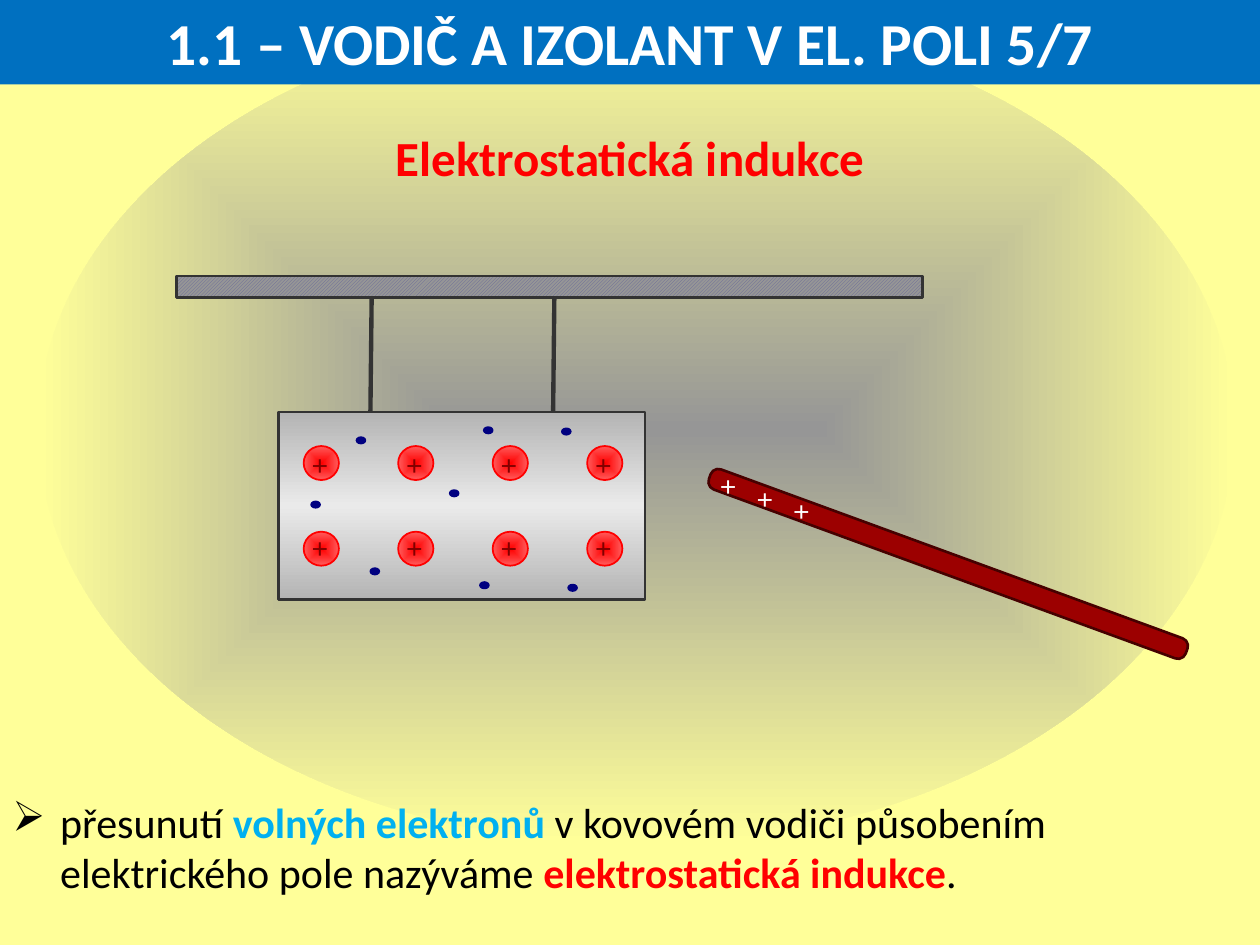
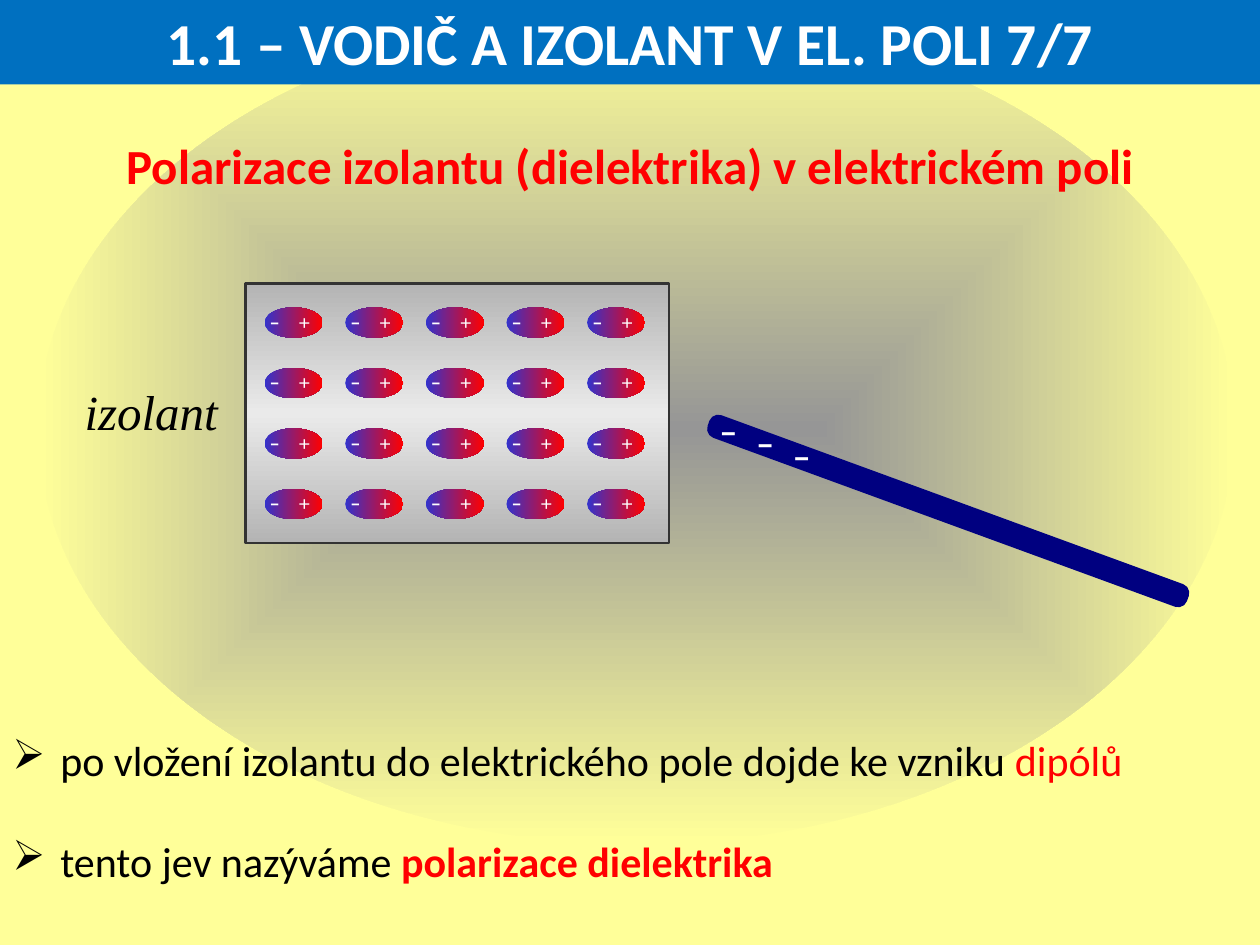
"""Build two slides on conductors and insulators in an electric field."""
import lxml.etree
import pptx
import pptx.dml.color
import pptx.enum.dml
import pptx.enum.shapes
import pptx.enum.text
import pptx.oxml
import pptx.oxml.ns
import pptx.util

Inches, Pt = pptx.util.Inches, pptx.util.Pt
RGBColor = pptx.dml.color.RGBColor
MSO_SHAPE = pptx.enum.shapes.MSO_SHAPE
CENTER = pptx.enum.text.PP_ALIGN.CENTER
qn = pptx.oxml.ns.qn

YELLOW = RGBColor(0xFF, 0xFF, 0x99)
GREY = RGBColor(0x96, 0x96, 0x96)
SLATE = RGBColor(0x66, 0x66, 0x99)
DARK = RGBColor(0x33, 0x33, 0x33)
SILVER = RGBColor(0xB4, 0xB4, 0xB4)
PALE = RGBColor(0xEA, 0xEA, 0xEA)
BLACK = RGBColor(0, 0, 0)
WHITE = RGBColor(0xFF, 0xFF, 0xFF)
RED = RGBColor(0xFF, 0, 0)
LIGHT_RED = RGBColor(0xFF, 0x5C, 0x5C)
MAROON = RGBColor(0x80, 0, 0)
ROD_RED = RGBColor(0x9C, 0, 0)
ROD_EDGE = RGBColor(0x46, 0, 0)
NAVY = RGBColor(0, 0, 0x80)
VIOLET = RGBColor(0x33, 0x33, 0xCC)
SKY = RGBColor(0, 0xB0, 0xF0)
BLUE = RGBColor(0, 0x70, 0xC0)

RADIAL = '<a:path path="shape"><a:fillToRect l="50000" t="50000" r="50000" b="50000"/></a:path>'
ACROSS = '<a:lin ang="0" scaled="0"/>'
DOWN = '<a:lin ang="5400000" scaled="0"/>'


def add_shape(s, kind, box, fill, line=None, width=1):
    """Add a preset shape; fill is a colour or (shading, colours)."""
    sp = s.shapes.add_shape(kind, *[Inches(v) for v in box])
    sp.shadow.inherit = False
    if isinstance(fill, RGBColor):
        sp.fill.solid()
        sp.fill.fore_color.rgb = fill
    else:
        shading, colours = fill
        stops = "".join(
            f'<a:gs pos="{100000 * i // (len(colours) - 1)}"><a:srgbClr val="{c}"/></a:gs>'
            for i, c in enumerate(colours))
        sp.fill.background()
        spPr = sp._element.spPr
        spPr.replace(spPr.find(qn("a:noFill")), pptx.oxml.parse_xml(
            f'<a:gradFill {pptx.oxml.ns.nsdecls("a")} rotWithShape="1">'
            f'<a:gsLst>{stops}</a:gsLst>{shading}</a:gradFill>'))
    if line is None:
        sp.line.fill.background()
    else:
        sp.line.color.rgb = line
        sp.line.width = Pt(width)
    return sp


def add_text(s, box, paras, size, font="Calibri", align=None, indent=0, bullet=None,
             wrap=True, gap=0, sp=None):
    """Write paragraphs of (text, colour, style) runs in a new box or in sp."""
    sp = sp or s.shapes.add_textbox(*[Inches(v) for v in box])
    tf = sp.text_frame
    tf.word_wrap = wrap
    tf.auto_size = pptx.enum.text.MSO_AUTO_SIZE.SHAPE_TO_FIT_TEXT
    for i, runs in enumerate(paras):
        p = tf.add_paragraph() if i else tf.paragraphs[0]
        p.alignment = align
        if i:
            p.space_before = Pt(gap)
        if indent:
            pPr = p._p.get_or_add_pPr()
            pPr.set("marL", str(Inches(indent)))
            pPr.set("indent", str(-Inches(indent)))
            if bullet:
                lxml.etree.SubElement(pPr, qn("a:buChar")).set("char", bullet)
        for text, colour, style in runs:
            r = p.add_run()
            r.text = text
            r.font.name = font
            r.font.size = Pt(size)
            r.font.color.rgb = colour
            r.font.bold = "b" in style
            r.font.italic = "i" in style
    return sp


prs = pptx.Presentation()
prs.slide_width, prs.slide_height = Inches(10), Inches(7.5)

SLIDES = [
    dict(page=5, heading="Elektrostatická indukce", heading_y=0.96,
         body=(0, 6.27, 10, 0.91), block=(2.21, 3.27, 2.91, 1.49),
         rod_y=4.39, rod=ROD_RED, edge=ROD_EDGE,
         sign="+", sign_size=18, sign_y=3.66, sign_box=(0.37, 0.4),
         points=[[("přesunutí ", BLACK, ""), ("volných elektronů ", SKY, "b"),
                  ("v kovovém vodiči působením elektrického pole nazýváme ", BLACK, ""),
                  ("elektrostatická indukce", RED, "b"), (".", BLACK, "")]]),
    dict(page=7, heading="Polarizace izolantu (dielektrika) v elektrickém poli", heading_y=1.03,
         body=(0, 5.78, 9.82, 1.31), block=(1.95, 2.25, 3.36, 2.06),
         rod_y=3.97, rod=NAVY, edge=NAVY,
         sign="-", sign_size=28, sign_y=3.11, sign_box=(0.33, 0.57),
         points=[[("po vložení izolantu do elektrického pole dojde ke vzniku ", BLACK, ""),
                  ("dipólů", RED, "")],
                 [("tento jev nazýváme ", BLACK, ""), ("polarizace dielektrika", RED, "b")]]),
]

for d in SLIDES:
    s = prs.slides.add_slide(prs.slide_layouts[6])
    s.background.fill.solid()
    s.background.fill.fore_color.rgb = YELLOW
    add_shape(s, MSO_SHAPE.OVAL, (0.3, 0.11, 9.5, 6.59), (RADIAL, [GREY, YELLOW]))
    add_text(s, d["body"], d["points"], 24, indent=0.38, bullet="➢", gap=29)
    add_shape(s, MSO_SHAPE.RECTANGLE, d["block"], (DOWN, [SILVER, PALE, SILVER]), DARK, 1.5)

    rod = add_shape(s, MSO_SHAPE.ROUNDED_RECTANGLE, (5.51, d["rod_y"], 4.03, 0.17),
                    d["rod"], d["edge"], 1.5)
    rod.adjustments[0] = 0.38
    rod.rotation = 200.1
    for i in range(3):
        add_text(s, (5.61 + 0.29 * i, d["sign_y"] + 0.1 * i, *d["sign_box"]),
                 [[(d["sign"], WHITE, "")]], d["sign_size"], "Montserrat", wrap=False)

    band = add_shape(s, MSO_SHAPE.RECTANGLE, (0, 0, 10, 0.67), BLUE)
    add_text(s, None, [[(f"1.1 – VODIČ A IZOLANT V EL. POLI {d['page']}/7", WHITE, "b")]],
             34, align=CENTER, sp=band)
    add_text(s, (0, d["heading_y"], 10, 0.57), [[(d["heading"], RED, "b")]],
             28, align=CENTER, indent=0.5)

s = prs.slides[0]
beam = add_shape(s, MSO_SHAPE.RECTANGLE, (1.4, 2.19, 5.92, 0.17), GREY, DARK, 1.5)
beam.fill.patterned()
beam.fill.pattern = pptx.enum.dml.MSO_PATTERN.DARK_UPWARD_DIAGONAL
beam.fill.fore_color.rgb = SLATE
beam.fill.back_color.rgb = GREY
for x in (2.94, 4.39):
    thread = s.shapes.add_connector(pptx.enum.shapes.MSO_CONNECTOR.STRAIGHT,
                                    Inches(x), Inches(3.27), Inches(x + 0.01), Inches(2.36))
    thread.line.color.rgb = DARK
    thread.line.width = Pt(2.5)
    lxml.etree.SubElement(thread._element.spPr, qn("a:effectLst"))
for ion_y, plus_y in ((3.54, 3.49), (4.22, 4.15)):
    for col in range(4):
        x = 2.41 + 0.75 * col
        add_shape(s, MSO_SHAPE.OVAL, (x, ion_y, 0.28, 0.27), (RADIAL, [RED, LIGHT_RED]), RED)
        add_text(s, (x - 0.04, plus_y, 0.37, 0.4), [[("+", MAROON, "")]],
                 18, "Montserrat", wrap=False)
for x, y in ((2.83, 3.47), (2.47, 3.98), (2.94, 4.51), (3.57, 3.89),
             (3.84, 3.39), (3.81, 4.62), (4.51, 4.64), (4.46, 3.4)):
    add_shape(s, MSO_SHAPE.OVAL, (x, y, 0.07, 0.05), NAVY, NAVY)

s = prs.slides[1]
add_text(s, (0.57, 2.98, 1.26, 0.57), [[("izolant", BLACK, "i")]], 28, "Times New Roman",
         align=CENTER, indent=0.5, wrap=False)
for col in range(5):
    for row in range(4):
        x, y = 2.1 + 0.64 * col, 2.44 + 0.48 * row
        add_shape(s, MSO_SHAPE.OVAL, (x, y, 0.46, 0.24), (ACROSS, [VIOLET, RED]))
        sp = add_text(s, (x - 0.06, y - 0.08, 0.58, 0.37),
                      [[("-", WHITE, ""), (" ", WHITE, ""), ("+", WHITE, "")]],
                      16, "Montserrat", wrap=False)
        minus, space, plus = sp.text_frame.paragraphs[0].runs
        space.font.size = plus.font.size = Pt(13)
        space._r.get_or_add_rPr().set("spc", "680")

prs.save("out.pptx")
